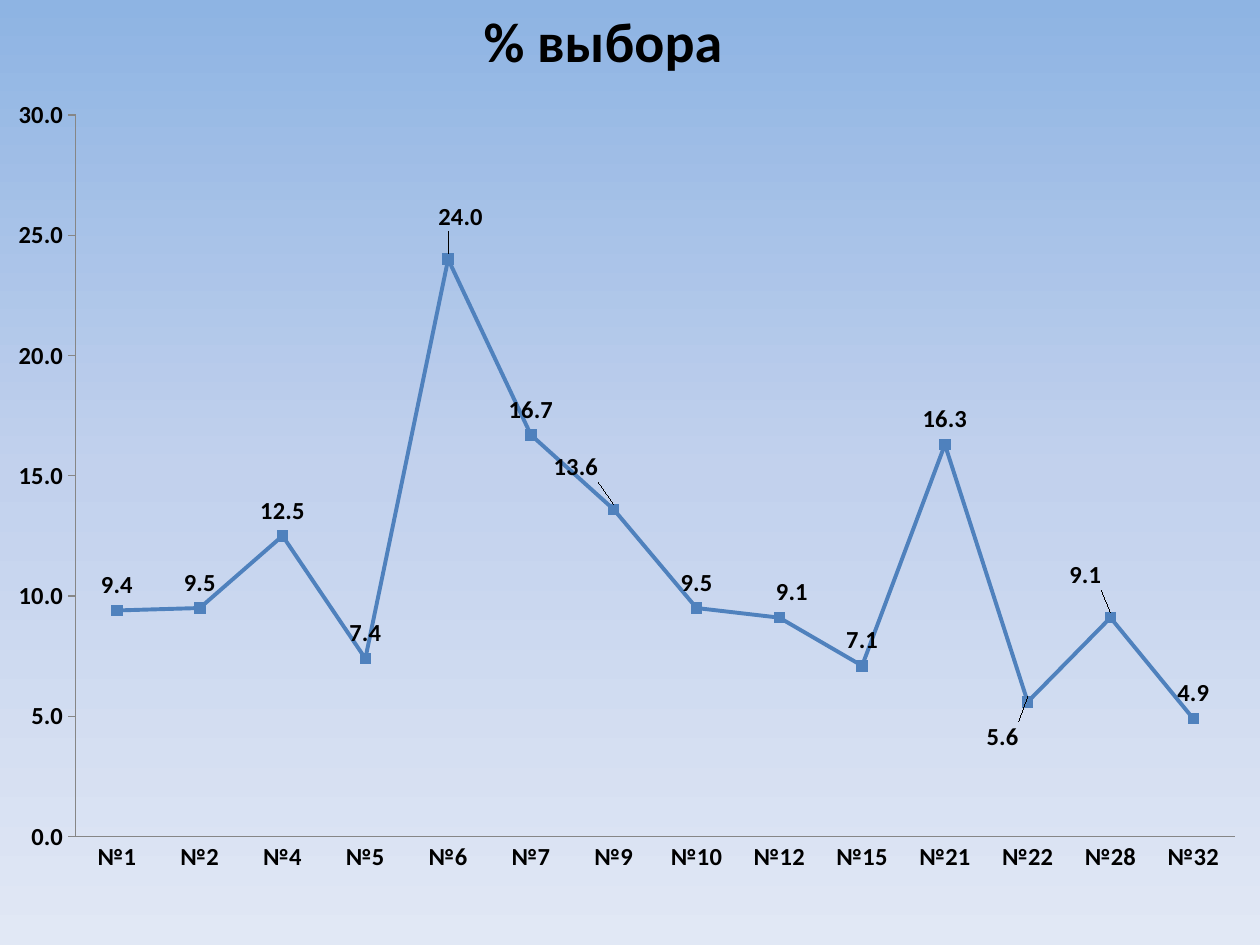
from lxml import etree
from pptx import Presentation
from pptx.chart import data
from pptx.dml import color
from pptx.enum import chart as ec, text
from pptx.oxml import ns
from pptx.util import Pt

COLORS = {"top": "8EB4E3", "middle": "C2D1ED", "bottom": "E1E8F5",
          "text": "000000", "line": "4F81BD", "axis": "868686"}
RGB = {name: color.RGBColor.from_string(value) for name, value in COLORS.items()}


def set_font(font, size):
    for name, value in {"name": "Calibri", "size": Pt(size), "bold": True}.items():
        setattr(font, name, value)
    font.color.rgb = RGB["text"]


def add_layout(parent, index, values):
    for old in parent.findall(ns.qn("c:layout")):
        parent.remove(old)
    layout = etree.Element(ns.qn("c:layout"))
    manual = etree.SubElement(layout, ns.qn("c:manualLayout"))
    for tag, value in values.items():
        etree.SubElement(manual, ns.qn(f"c:{tag}")).set("val", str(value))
    parent.insert(index, layout)


prs = Presentation()
prs.slide_width, prs.slide_height = Pt(720), Pt(540)
s = prs.slides.add_slide(prs.slide_layouts[6])

fill = s.background.fill
fill.gradient()
fill.gradient_angle = 270
stops = next(s.background._cSld.iter(ns.qn("a:gsLst")))
for old in list(stops):
    stops.remove(old)
for position, name in ((0, "top"), (50, "middle"), (100, "bottom")):
    stop = etree.SubElement(stops, ns.qn("a:gs"), pos=str(position * 1000))
    etree.SubElement(stop, ns.qn("a:srgbClr"), val=COLORS[name])

tf = s.shapes.add_textbox(Pt(269.25), Pt(0), Pt(152), Pt(46)).text_frame
tf.word_wrap = False
tf.auto_size = text.MSO_AUTO_SIZE.SHAPE_TO_FIT_TEXT
r = tf.paragraphs[0].add_run()
r.text = "% выбора"
set_font(r.font, 32)

choices = {"№1": 9.4, "№2": 9.5, "№4": 12.5, "№5": 7.4, "№6": 24, "№7": 16.7, "№9": 13.6,
           "№10": 9.5, "№12": 9.1, "№15": 7.1, "№21": 16.3, "№22": 5.6, "№28": 9.1, "№32": 4.9}
cd = data.CategoryChartData(number_format="0.0")
cd.categories = list(choices)
cd.add_series("Series 1", choices.values())
chart = s.shapes.add_chart(ec.XL_CHART_TYPE.LINE_MARKERS_STACKED,
                           Pt(0), Pt(49), Pt(720), Pt(491), cd).chart
chart.has_title = chart.has_legend = False
chart.font.name, chart.font.size = "Calibri", Pt(10)
chart.font.color.rgb = RGB["text"]
add_layout(chart._chartSpace.chart.plotArea, 0,
           {"layoutTarget": "inner", "xMode": "edge", "yMode": "edge",
            "x": 0.06, "y": 0.034, "w": 0.92, "h": 0.84})

for axis, tick in ((chart.category_axis, ec.XL_TICK_MARK.NONE),
                   (chart.value_axis, ec.XL_TICK_MARK.OUTSIDE)):
    for name, value in {"has_major_gridlines": False, "major_tick_mark": tick,
                        "minor_tick_mark": ec.XL_TICK_MARK.NONE}.items():
        setattr(axis, name, value)
    set_font(axis.tick_labels.font, 14)
    axis.format.line.color.rgb = RGB["axis"]
    axis.format.line.width = Pt(0.75)
for name, value in {"minimum_scale": 0, "maximum_scale": 30, "major_unit": 5}.items():
    setattr(chart.value_axis, name, value)
chart.value_axis.tick_labels.number_format = "0.0"
chart.value_axis.tick_labels.number_format_is_linked = False

plot = chart.plots[0]
plot.vary_by_categories = False
series = plot.series[0]
series.smooth = False
series.format.line.color.rgb = RGB["line"]
series.format.line.width = Pt(2.25)
series.marker.style = ec.XL_MARKER_STYLE.SQUARE
series.marker.size = 6
series.marker.format.fill.solid()
series.marker.format.fill.fore_color.rgb = RGB["line"]
series.marker.format.line.color.rgb = RGB["line"]

labels = series.data_labels
for name, value in {"show_value": True, "number_format": "0.0", "number_format_is_linked": False,
                    "position": ec.XL_LABEL_POSITION.ABOVE}.items():
    setattr(labels, name, value)
set_font(labels.font, 14)

label_shifts = {"№6": (0.01, -0.02), "№9": (-0.03, -0.02), "№12": (0.01, 0),
                "№22": (-0.02, 0.07), "№28": (-0.02, -0.02)}
for category, (dx, dy) in label_shifts.items():
    index = list(choices).index(category)
    label = series.points[index].data_label
    set_font(label.font, 14)
    label.position = ec.XL_LABEL_POSITION.ABOVE
    element = labels._element.xpath(f'c:dLbl[c:idx/@val="{index}"]')[0]
    add_layout(element, 1, {"x": dx, "y": dy})
    number = etree.Element(ns.qn("c:numFmt"), formatCode="0.0", sourceLinked="0")
    element.insert(2, number)

prs.save("out.pptx")
